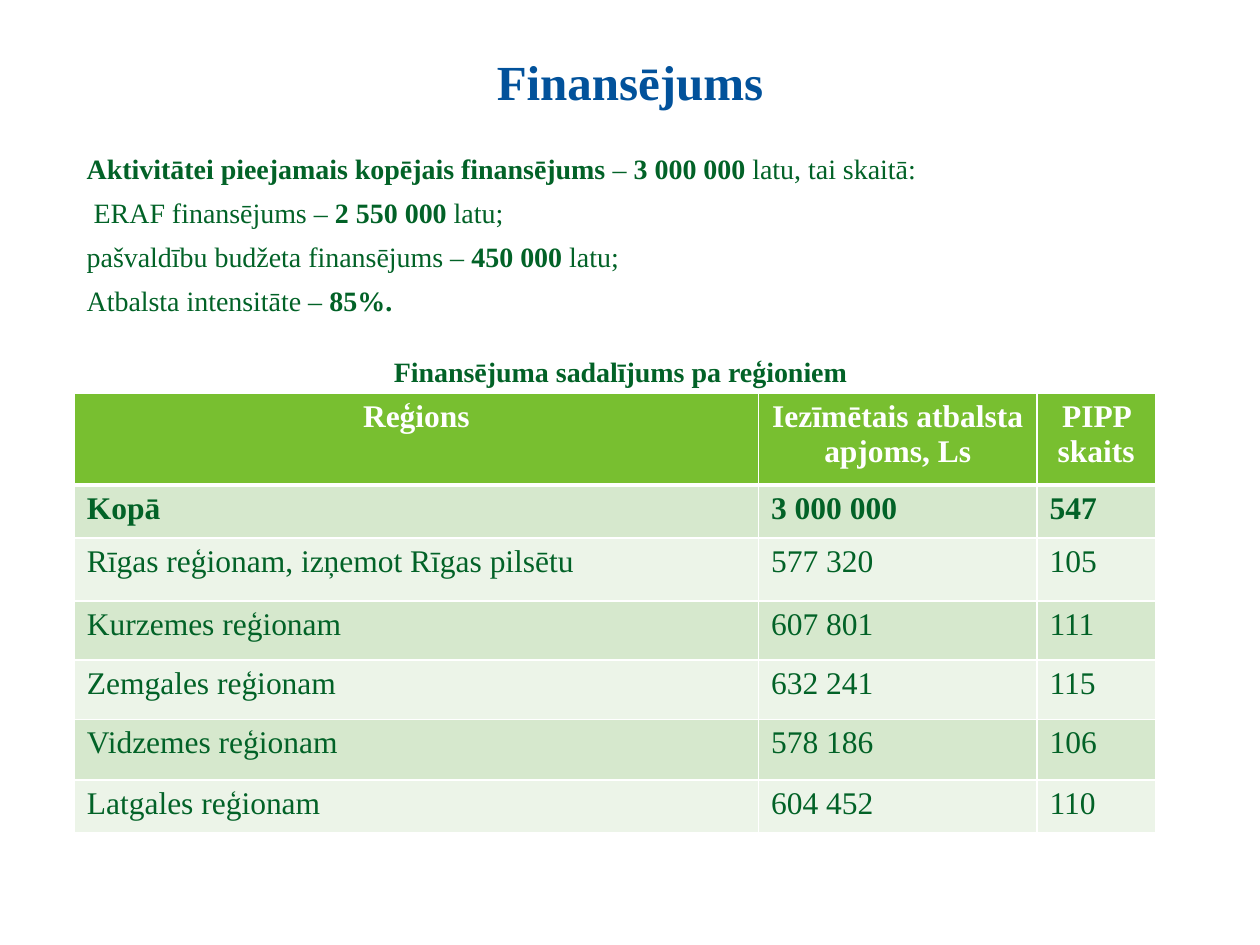
from pptx import Presentation
from pptx.dml.color import RGBColor
from pptx.enum.text import MSO_ANCHOR, PP_ALIGN
from pptx.oxml import parse_xml
from pptx.oxml.ns import nsdecls
from pptx.util import Inches, Pt

FONT = "Times New Roman"
BLUE, GREEN, WHITE = "02529B", "026227", "FFFFFF"
HEAD, BANDS = "78BF30", ("D6E8CD", "ECF4E8")

TITLE = "Finansējums"
# Each line: indent in points, then (text, bold) runs
LINES = [
    (0, [("Aktivitātei pieejamais kopējais finansējums ", True), ("– ", False),
         ("3 000 000 ", True), ("latu, tai skaitā:", False)]),
    (4, [("ERAF finansējums – ", False), ("2 550 000 ", True), ("latu;", False)]),
    (0, [("pašvaldību budžeta finansējums – ", False), ("450 000 ", True),
         ("latu;", False)]),
    (0, [("Atbalsta intensitāte – ", False), ("85%.", True)]),
]
CAPTION = "Finansējuma sadalījums pa reģioniem"
ROWS = [
    ("Reģions", "Iezīmētais atbalsta apjoms, Ls", "PIPP skaits"),
    ("Kopā", "3 000 000", "547"),
    ("Rīgas reģionam, izņemot Rīgas pilsētu", "577 320", "105"),
    ("Kurzemes reģionam", "607 801", "111"),
    ("Zemgales reģionam", "632 241", "115"),
    ("Vidzemes reģionam", "578 186", "106"),
    ("Latgales reģionam", "604 452", "110"),
]
WIDTHS = (5.43, 2.21, 0.94)
HEIGHTS = (0.73, 0.42, 0.5, 0.47, 0.47, 0.48, 0.42)


def rgb(code):
    return RGBColor.from_string(code)


def style(font, size, color, bold):
    font.name, font.size, font.bold = FONT, Pt(size), bold
    font.color.rgb = rgb(color)


def add_run(para, text, size, color, bold):
    run = para.add_run()
    run.text = text
    style(run.font, size, color, bold)


def add_box(left, top, width, height):
    box = slide.shapes.add_textbox(*map(Inches, (left, top, width, height)))
    box.text_frame.word_wrap = True
    return box.text_frame


def edge(cell, side, width):
    cell._tc.get_or_add_tcPr().append(parse_xml(
        f'<a:ln{side} {nsdecls("a")} w="{Pt(width)}"><a:solidFill>'
        f'<a:srgbClr val="{WHITE}"/></a:solidFill></a:ln{side}>'))


prs = Presentation()
prs.slide_width, prs.slide_height = Inches(10), Inches(7.5)
slide = prs.slides.add_slide(prs.slide_layouts[6])

# Title
frame = add_box(0.5, 0.3, 9, 0.69)
frame.vertical_anchor = MSO_ANCHOR.MIDDLE
para = frame.paragraphs[0]
para.alignment = PP_ALIGN.CENTER
add_run(para, TITLE, 28, BLUE, True)

# Funding lines and table caption
frame = add_box(0.59, 1.15, 8.67, 2.13)
for i, (indent, runs) in enumerate(LINES):
    para = frame.add_paragraph() if i else frame.paragraphs[0]
    para._p.get_or_add_pPr().set("marL", str(Pt(indent)))
    if i:
        para.space_before = Pt(6)
    for text, bold in runs:
        add_run(para, text, 16, GREEN, bold)
para = frame.add_paragraph()
para.alignment, para.space_before = PP_ALIGN.CENTER, Pt(21.5)
add_run(para, CAPTION, 16, GREEN, True)

# Table of regions
table = slide.shapes.add_table(
    len(ROWS), len(WIDTHS), Inches(0.59), Inches(3.12),
    Inches(sum(WIDTHS)), Inches(sum(HEIGHTS))).table
for col, width in zip(table.columns, WIDTHS):
    col.width = Inches(width)
for r, (row, height) in enumerate(zip(ROWS, HEIGHTS)):
    table.rows[r].height = Inches(height)
    for c, text in enumerate(row):
        cell = table.cell(r, c)
        for side in "LRTB":
            thick = (r, side) in ((0, "B"), (1, "T"))
            edge(cell, side, 3 if thick else 1)
        cell.fill.solid()
        cell.fill.fore_color.rgb = rgb(BANDS[(r - 1) % 2] if r else HEAD)
        para = cell.text_frame.paragraphs[0]
        para.alignment = PP_ALIGN.LEFT if r else PP_ALIGN.CENTER
        add_run(para, text, 18, GREEN if r else WHITE, r < 2)

prs.save("out.pptx")
